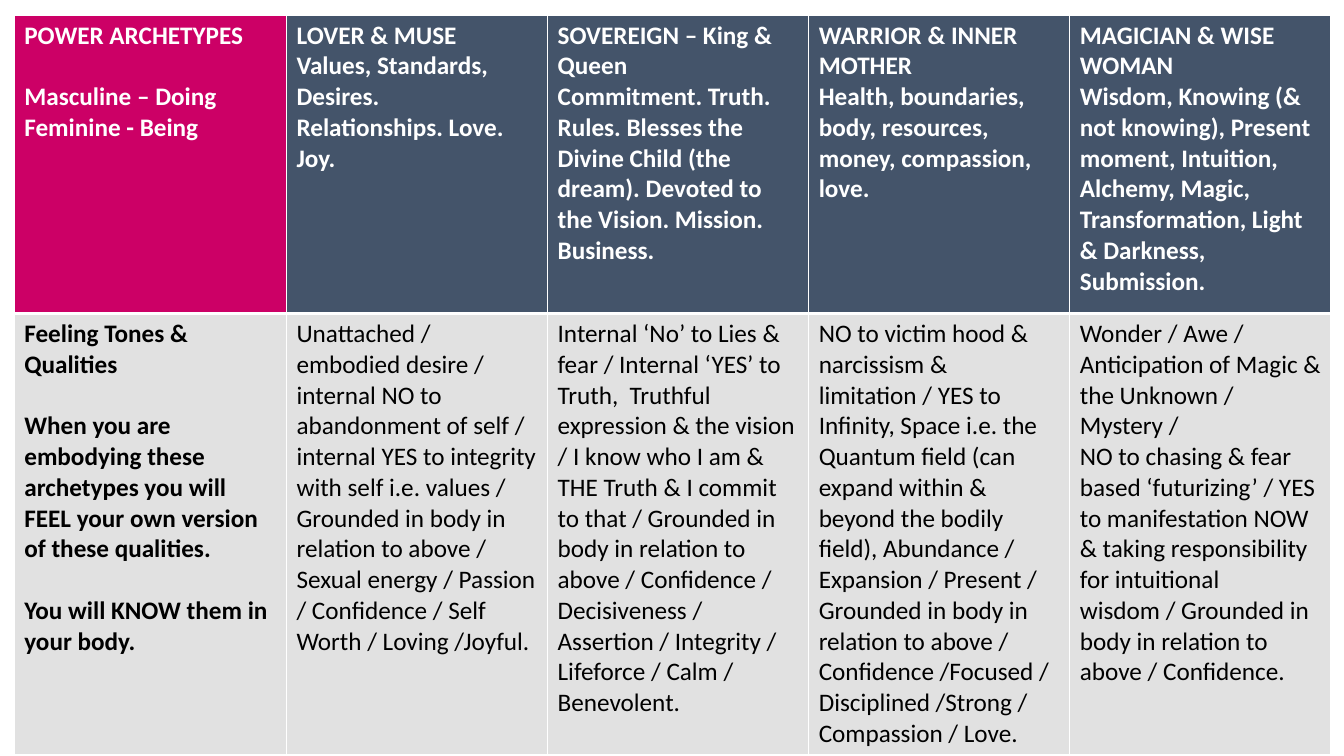
"""Build the power archetypes table slide."""
from dataclasses import dataclass

from lxml.etree import SubElement
from pptx import Presentation
from pptx.dml.color import RGBColor as Rgb
from pptx.oxml.ns import qn
from pptx.util import Cm, Pt

HEADINGS = [
    ["POWER ARCHETYPES", "Masculine – Doing", "Feminine - Being"],
    ["LOVER & MUSE", "Values, Standards, Desires.", "Relationships. Love. Joy."],
    ["SOVEREIGN – King & Queen",
     "Commitment. Truth. Rules. Blesses the Divine Child (the dream). "
     "Devoted to the Vision. Mission. Business."],
    ["WARRIOR & INNER MOTHER",
     "Health, boundaries, body, resources, money, compassion, love."],
    ["MAGICIAN & WISE WOMAN",
     "Wisdom, Knowing (& not knowing), Present moment, Intuition, Alchemy, "
     "Magic, Transformation, Light & Darkness, Submission."],
]
FEELINGS = [
    ["Feeling Tones & Qualities",
     "When you are embodying these archetypes you will FEEL your own version "
     "of these qualities.",
     "You will KNOW them in your body."],
    ["Unattached / embodied desire / internal NO to abandonment of self / "
     "internal YES to integrity with self i.e. values /",
     "Grounded in body in relation to above / Sexual energy / Passion / "
     "Confidence / Self Worth / Loving /Joyful."],
    ["Internal ‘No’ to Lies & fear / Internal ‘YES’ to Truth,  Truthful "
     "expression & the vision / I know who I am & THE Truth & I commit to that / "
     "Grounded in body in relation to above / Confidence / Decisiveness / "
     "Assertion / Integrity / Lifeforce / Calm / Benevolent."],
    ["NO to victim hood & narcissism & limitation / YES to Infinity, Space i.e. "
     "the Quantum field (can expand within & beyond the bodily field), "
     "Abundance / Expansion / Present / Grounded in body in relation to above / "
     "Confidence /Focused / Disciplined /Strong / Compassion / Love."],
    ["Wonder / Awe / Anticipation of Magic & the Unknown / Mystery /",
     "NO to chasing & fear based ‘futurizing’ / YES to manifestation NOW & "
     "taking responsibility for intuitional wisdom / Grounded in body in "
     "relation to above / Confidence."],
]
SPACED = {"Masculine – Doing", FEELINGS[0][1], FEELINGS[0][2]}


@dataclass(frozen=True)
class Theme:
    """Colours, font and sizes of the slide."""
    pink: str = "CC0066"
    slate: str = "44546A"
    grey: str = "E1E1E1"
    white: str = "FFFFFF"
    black: str = "000000"
    font: str = "Calibri"
    size: float = 18
    gap: float = 22
    thin: float = 1
    thick: float = 3


THEME = Theme()
LEFT, TOP = Cm(0.36), Cm(0.38)
COLUMN_WIDTHS = [Cm(6.86)] + [Cm(6.58)] * 4
ROW_HEIGHTS = [Cm(7.52), Cm(10.72)]


def draw_borders(cell, is_heading):
    """Outline a cell in white, thicker between the two rows."""
    divider = "lnB" if is_heading else "lnT"
    properties = cell._tc.get_or_add_tcPr()
    for side in ("lnL", "lnR", "lnT", "lnB"):
        weight = THEME.thick if side == divider else THEME.thin
        border = SubElement(properties, qn(f"a:{side}"), w=str(Pt(weight)))
        paint = SubElement(border, qn("a:solidFill"))
        SubElement(paint, qn("a:srgbClr"), val=THEME.white)


def write_cell(cell, lines, fill, ink, bold):
    """Fill a cell and write its paragraphs."""
    cell.fill.solid()
    cell.fill.fore_color.rgb = Rgb.from_string(fill)
    for index, line in enumerate(lines):
        frame = cell.text_frame
        paragraph = frame.add_paragraph() if index else frame.paragraphs[0]
        paragraph.space_before = Pt(THEME.gap if line in SPACED else 0)
        run = paragraph.add_run()
        run.text = line
        run.font.name = THEME.font
        run.font.size = Pt(THEME.size)
        run.font.bold = bold
        run.font.color.rgb = Rgb.from_string(ink)


def main():
    """Create the slide and save it."""
    deck = Presentation()
    deck.slide_width, deck.slide_height = Cm(33.87), Cm(19.05)
    slide = deck.slides.add_slide(deck.slide_layouts[6])
    archetypes = slide.shapes.add_table(
        len(ROW_HEIGHTS), len(COLUMN_WIDTHS), LEFT, TOP,
        sum(COLUMN_WIDTHS), sum(ROW_HEIGHTS)).table
    for column, width in zip(archetypes.columns, COLUMN_WIDTHS):
        column.width = width
    for row, height in zip(archetypes.rows, ROW_HEIGHTS):
        row.height = height
    for row_index, texts in enumerate((HEADINGS, FEELINGS)):
        is_heading = row_index == 0
        ink = THEME.white if is_heading else THEME.black
        for column_index, lines in enumerate(texts):
            is_label = column_index == 0
            heading_fill = THEME.pink if is_label else THEME.slate
            cell = archetypes.cell(row_index, column_index)
            draw_borders(cell, is_heading)
            write_cell(cell, lines, heading_fill if is_heading else THEME.grey,
                       ink, is_heading or is_label)
    deck.save("out.pptx")


if __name__ == "__main__":
    main()
